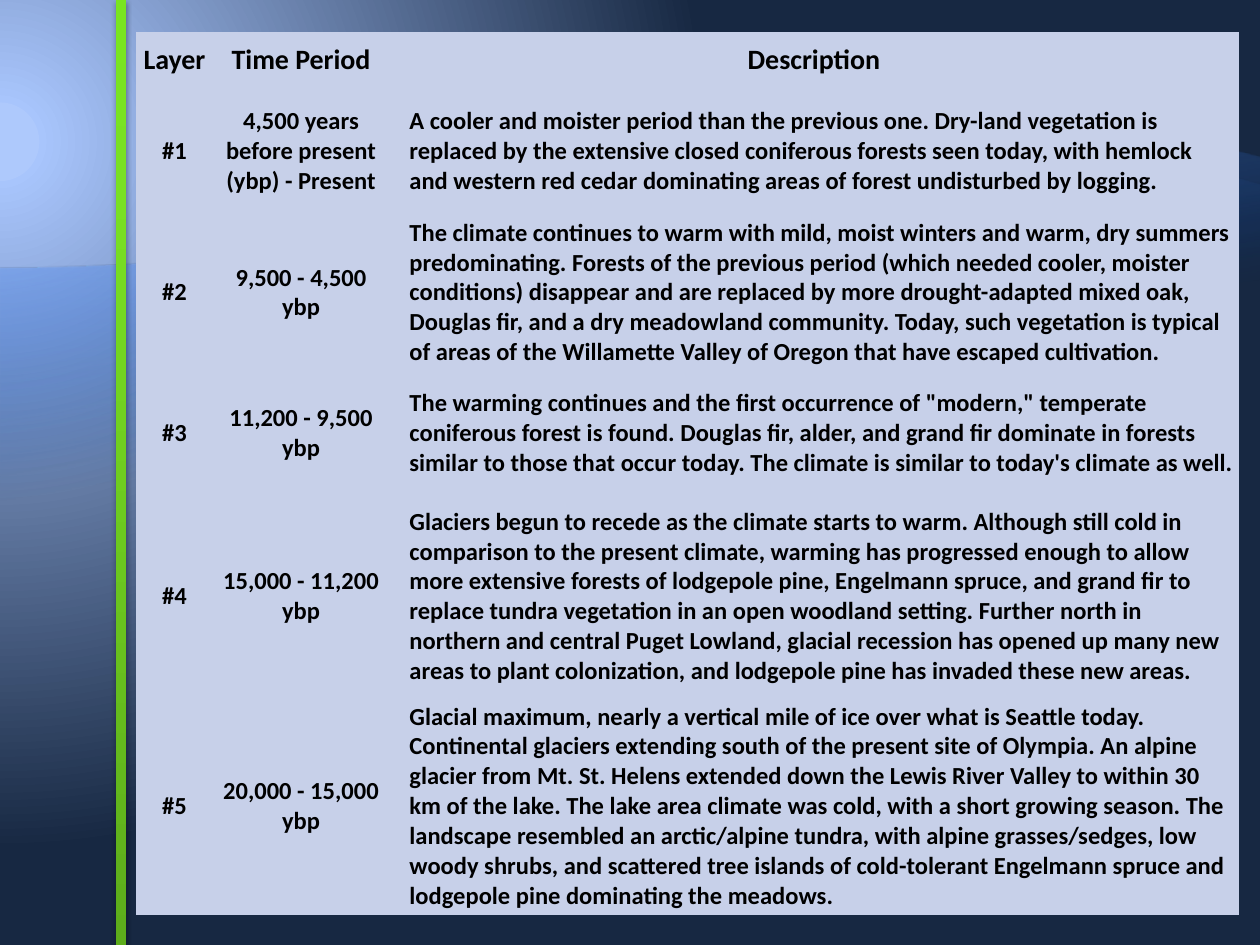
"""Build a slide that tables five climate layers over a blue gradient."""
from pptx import Presentation
from pptx.dml.color import RGBColor
from pptx.enum.shapes import MSO_SHAPE
from pptx.enum.text import MSO_ANCHOR, PP_ALIGN
from pptx.oxml import parse_xml
from pptx.oxml.ns import nsdecls
from pptx.util import Inches, Pt

HEADS = ["Layer", "Time Period", "Description"]
LAYERS = [
    ("4,500 years before present (ybp) - Present",
     "A cooler and moister period than the previous one. Dry-land vegetation is "
     "replaced by the extensive closed coniferous forests seen today, with hemlock "
     "and western red cedar dominating areas of forest undisturbed by logging."),
    ("9,500 - 4,500 ybp",
     "The climate continues to warm with mild, moist winters and warm, dry summers "
     "predominating. Forests of the previous period (which needed cooler, moister "
     "conditions) disappear and are replaced by more drought-adapted mixed oak, "
     "Douglas fir, and a dry meadowland community. Today, such vegetation is typical "
     "of areas of the Willamette Valley of Oregon that have escaped cultivation."),
    ("11,200 - 9,500 ybp",
     "The warming continues and the first occurrence of \"modern,\" temperate "
     "coniferous forest is found. Douglas fir, alder, and grand fir dominate in forests "
     "similar to those that occur today. The climate is similar to today's climate as well."),
    ("15,000 - 11,200 ybp",
     "Glaciers begun to recede as the climate starts to warm. Although still cold in "
     "comparison to the present climate, warming has progressed enough to allow "
     "more extensive forests of lodgepole pine, Engelmann spruce, and grand fir to "
     "replace tundra vegetation in an open woodland setting. Further north in "
     "northern and central Puget Lowland, glacial recession has opened up many new "
     "areas to plant colonization, and lodgepole pine has invaded these new areas."),
    ("20,000 - 15,000 ybp",
     "Glacial maximum, nearly a vertical mile of ice over what is Seattle today. "
     "Continental glaciers extending south of the present site of Olympia. An alpine "
     "glacier from Mt. St. Helens extended down the Lewis River Valley to within 30 "
     "km of the lake. The lake area climate was cold, with a short growing season. The "
     "landscape resembled an arctic/alpine tundra, with alpine grasses/sedges, low "
     "woody shrubs, and scattered tree islands of cold-tolerant Engelmann spruce and "
     "lodgepole pine dominating the meadows."),
]
LINEAR = '<a:lin ang="{}" scaled="0"/>'
RADIAL = '<a:path path="circle"><a:fillToRect l="20000" t="30000" r="135000" b="100000"/></a:path>'
PLAIN = "{2D5ABB26-0587-4C30-8999-92F81FD0307C}"


def tint(code):
    return RGBColor.from_string(code)


def shade(item, fill, stops, form):
    fill.solid()
    marks = "".join(
        f'<a:gs pos="{pos * 1000}"><a:srgbClr val="{tint(code)}">'
        f'<a:alpha val="{alpha * 1000}"/></a:srgbClr></a:gs>'
        for pos, code, alpha in stops)
    old = item.element.xpath(".//p:bgPr/a:solidFill | ./p:spPr/a:solidFill")[0]
    old.getparent().replace(old, parse_xml(
        f'<a:gradFill {nsdecls("a")} rotWithShape="1"><a:gsLst>{marks}</a:gsLst>'
        f'{form}</a:gradFill>'))


def write(frame, text, font="Calibri", size=14, color="000000", bold=True,
          align=PP_ALIGN.CENTER, indent=0):
    para = frame.paragraphs[0]
    para.alignment = align
    if indent:
        props = para._p.get_or_add_pPr()
        props.set("marL", str(Inches(indent)))
        props.set("indent", "0")
    run = para.add_run()
    run.text = text
    run.font.name, run.font.size, run.font.bold = font, Pt(size), bold
    run.font.color.rgb = tint(color)


class Deck:
    panel = "C7D0E9"
    inset = Inches(0.03)

    def __init__(self, slide):
        self.slide = slide

    def ground(self, stops):
        shade(self.slide, self.slide.background.fill, stops, RADIAL)

    def hill(self, top, base, bend, stops):
        """Draw a full-width hill; bend holds the two curve handles."""
        pen = self.slide.shapes.build_freeform(Inches(10), Inches(base))
        pen.add_line_segments([(Inches(x), Inches(y)) for x, y in
                               [(0, base), (0, 2.13), (10, top)]])
        shape = pen.convert_to_shape()
        edge = shape.element.xpath(".//a:lnTo")[2]
        last = (10, top)
        points = "".join(f'<a:pt x="{Inches(x)}" y="{Inches(y - top)}"/>'
                         for x, y in [*bend, last])
        edge.getparent().replace(edge, parse_xml(
            f'<a:cubicBezTo {nsdecls("a")}>{points}</a:cubicBezTo>'))
        shape.shadow.inherit = False
        shape.line.fill.background()
        shade(shape, shape.fill, stops, LINEAR.format(260 * 60000))

    def bar(self, left, top, width, height, stops):
        shape = self.slide.shapes.add_shape(
            MSO_SHAPE.RECTANGLE, Inches(left), Inches(top), Inches(width), Inches(height))
        shape.line.fill.background()
        shade(shape, shape.fill, stops, LINEAR.format(270 * 60000))
        shape.shadow.inherit = False
        shape.element.xpath("./p:spPr/a:effectLst")[0].append(parse_xml(
            f'<a:outerShdw {nsdecls("a")} blurRad="{Pt(3.1)}" dist="{Pt(1.8)}" '
            f'dir="5400000"><a:srgbClr val="{tint("000000")}"><a:alpha val="35000"/>'
            '</a:srgbClr></a:outerShdw>'))

    def table(self, left, top, wides, highs, rows):
        frame = self.slide.shapes.add_table(
            len(highs), len(wides), Inches(left), Inches(top),
            Inches(sum(wides)), Inches(sum(highs)))
        frame.element.xpath(".//a:tableStyleId")[0].text = PLAIN
        grid = frame.table
        grid.first_row = grid.horz_banding = False
        for col, wide in zip(grid.columns, wides):
            col.width = Inches(wide)
        for r, (high, row) in enumerate(zip(highs, rows)):
            grid.rows[r].height = Inches(high)
            for c, text in enumerate(row):
                self.cell(grid.cell(r, c), text, r == 0, c == 2)

    def cell(self, cell, text, head, prose):
        cell.fill.solid()
        cell.fill.fore_color.rgb = tint(self.panel)
        cell.vertical_anchor = MSO_ANCHOR.MIDDLE
        cell.margin_left = cell.margin_right = self.inset
        cell.margin_top = cell.margin_bottom = self.inset
        if head:
            write(cell.text_frame, text, size=16)
        elif prose:
            write(cell.text_frame, text, align=PP_ALIGN.LEFT, indent=0.13)
        else:
            write(cell.text_frame, text)


def main():
    show = Presentation()
    show.slide_width, show.slide_height = Inches(10), Inches(7.5)
    deck = Deck(show.slides.add_slide(show.slide_layouts[6]))
    deck.ground([(5, "AEC9FC", 100), (5, "A8C5FC", 100), (90, "172842", 100)])
    deck.hill(1.25, 7.33, [(5, 2.13), (5.34, 0.05)],
              [(65, "004ABD", 0), (100, "7DAAFF", 55)])
    deck.hill(1.47, 6.37, [(5, 2.13), (5.98, 0.31)],
              [(65, "004ABD", 0), (100, "A6C4FF", 30)])
    deck.bar(0.92, 0, 0.08, 7.5,
             [(0, "5DAD1B", 100), (80, "79E023", 100), (100, "79E520", 100)])
    rows = [HEADS] + [(f"#{n}", *layer) for n, layer in enumerate(LAYERS, 1)]
    deck.table(1.08, 0.25, [0.61, 1.4, 6.74], [0.45, 1, 1.23, 0.99, 1.6, 1.73], rows)
    show.save("out.pptx")


if __name__ == "__main__":
    main()
